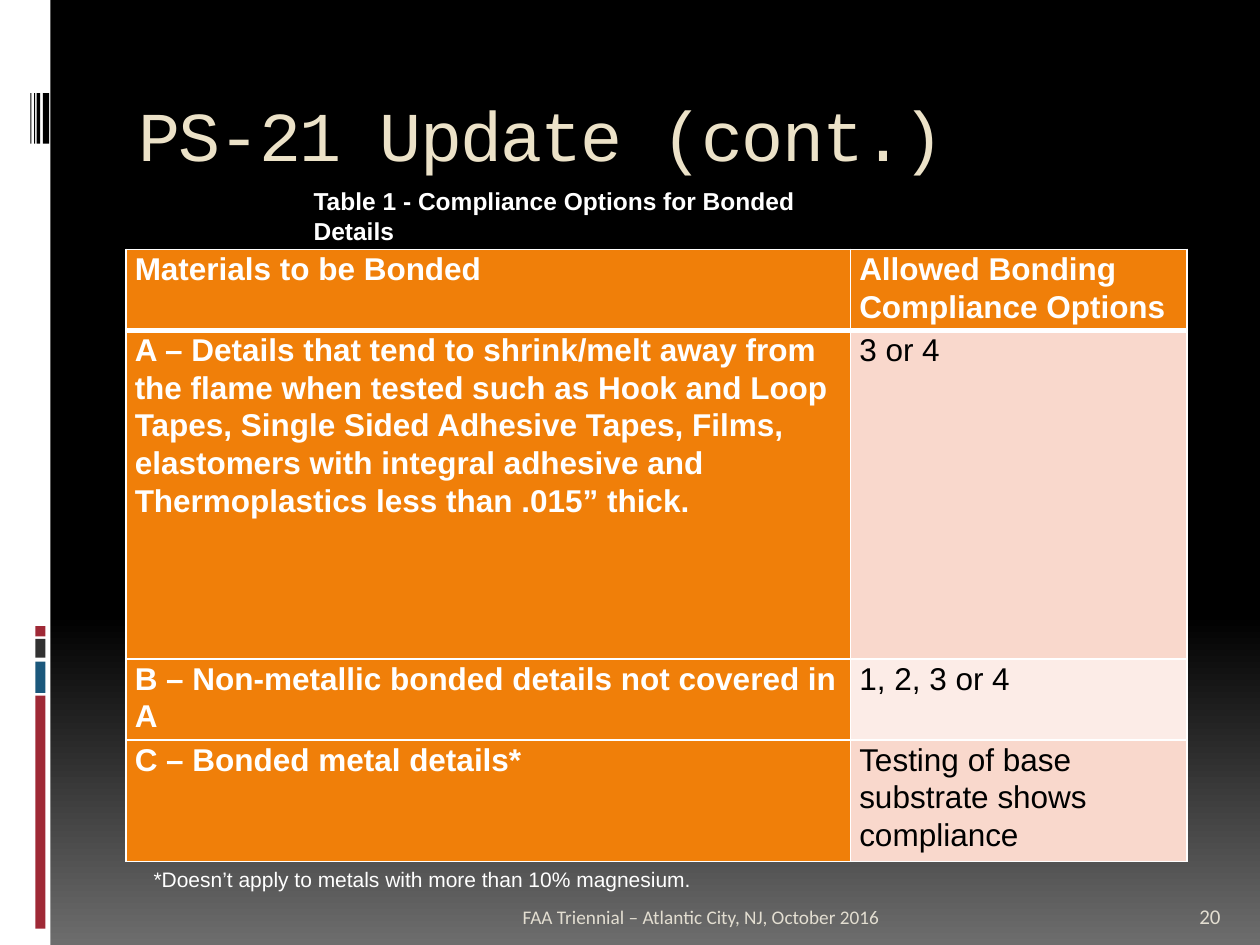
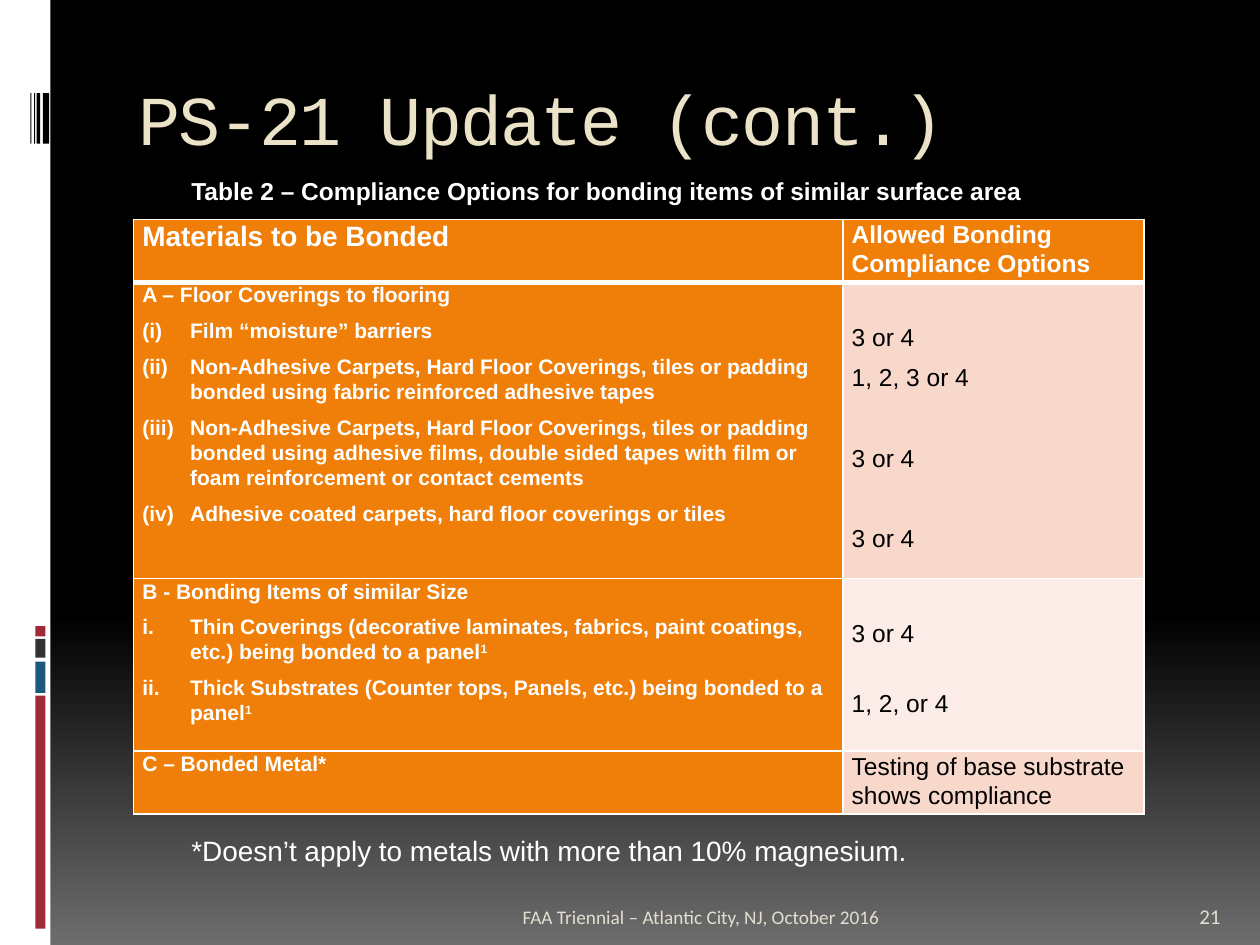
"""Build two slides with tables of bonding compliance options."""
from pptx import Presentation
from pptx.dml.color import RGBColor as RGB
from pptx.enum.shapes import MSO_SHAPE as SHAPE
from pptx.enum.text import MSO_ANCHOR as ANCHOR, PP_ALIGN as ALIGN
from pptx.oxml.ns import qn
from pptx.util import Inches, Pt
from lxml.etree import SubElement

BLACK, WHITE = RGB(0, 0, 0), RGB(255, 255, 255)
GREY, CHARCOAL = RGB(0x6D, 0x6D, 0x6D), RGB(0x32, 0x32, 0x32)
RED, BLUE = RGB(0x9F, 0x29, 0x36), RGB(0x1B, 0x58, 0x7C)
CREAM, SAND = RGB(0xEC, 0xE2, 0xC8), RGB(0xE3, 0xDE, 0xD1)
ORANGE = RGB(0xF0, 0x7F, 0x09)
TINTS = RGB(0xF9, 0xD8, 0xCC), RGB(0xFC, 0xEC, 0xE7)

TITLE_FONT = {"name": "Courier New", "size": Pt(40), "color": CREAM}
FOOTER_FONT = {"name": "Calibri", "size": Pt(11), "color": SAND}
NUMBER_FONT = FOOTER_FONT | {"size": Pt(12)}
NOTE_FONT = {"name": "Arial", "size": Pt(12), "color": WHITE}
CAPTION_FONT = NOTE_FONT | {"size": Pt(14), "bold": True}

BANDS = [
    (0, 0, 0.4, 7.5, WHITE),
    (0.28, 5.52, 0.08, 1.85, RED), (0.28, 5.25, 0.08, 0.25, BLUE),
    (0.28, 5.07, 0.08, 0.15, CHARCOAL), (0.28, 4.97, 0.08, 0.08, RED),
    (0.34, 0.74, 0.05, 0.4, BLACK), (0.29, 0.74, 0.03, 0.4, BLACK),
    (0.27, 0.74, 0.01, 0.4, BLACK), (0.24, 0.74, 0.01, 0.4, BLACK),
]
TITLE = "PS-21 Update (cont.)"
FOOTER = "FAA Triennial – Atlantic City, NJ, October 2016"
NOTE = "*Doesn’t apply to metals with more than 10% magnesium."
HEADS = "Materials to be Bonded", "Allowed Bonding Compliance Options"
METAL_RULE = "Testing of base substrate shows compliance"

LINE, SPACE = 17.2, 3
SKIP = LINE + 2 * SPACE

SLIDES = [
    {
        "number": "20", "title_top": 0.56,
        "caption": ("Table 1 - Compliance Options for Bonded Details", (2.39, 1.43, 4.69, 0.34)),
        "note": ((1.12, 6.83, 6.55, 0.3), 12),
        "at": (1, 1.98), "cols": (5.75, 2.67), "rows": (0.63, 2.61, 0.63, 0.63),
        "head_sizes": (18, 18), "body_sizes": (18, 18),
        "body": [
            {"items": ["A – Details that tend to shrink/melt away from the flame when tested such as "
                       "Hook and Loop Tapes, Single Sided Adhesive Tapes, Films, elastomers with "
                       "integral adhesive and Thermoplastics less than .015” thick."],
             "options": ["3 or 4"]},
            {"items": ["B – Non-metallic bonded details not covered in A"],
             "options": ["1, 2, 3 or 4"]},
            {"items": ["C – Bonded metal details*"], "options": [METAL_RULE]},
        ],
    },
    {
        "number": "21", "title_top": 0.43,
        "caption": ("Table 2 – Compliance Options for bonding items of similar surface area",
                    (1.42, 1.35, 7.67, 0.34)),
        "note": ((1.42, 6.56, 6.5, 0.37), 16),
        "at": (1.06, 1.74), "cols": (5.63, 2.39), "rows": (0.48, 2.35, 1.37, 0.48),
        "head_sizes": (16, 14), "body_sizes": (12, 14),
        "body": [
            {"items": ["A – Floor Coverings to flooring",
                       "Film “moisture” barriers",
                       "Non-Adhesive Carpets, Hard Floor Coverings, tiles or padding bonded using "
                       "fabric reinforced adhesive tapes",
                       "Non-Adhesive Carpets, Hard Floor Coverings, tiles or padding bonded using "
                       "adhesive films, double sided tapes with film or foam reinforcement or "
                       "contact cements",
                       "Adhesive coated carpets, hard floor coverings or tiles"],
             "numbering": "romanLcParenBoth",
             "options": ["3 or 4", "1, 2, 3 or 4", "3 or 4", "3 or 4"],
             "gaps": (0, 0, SKIP, SKIP), "top": 0.32},
            {"items": ["B - Bonding Items of similar Size",
                       "Thin Coverings (decorative laminates, fabrics, paint coatings, etc.) "
                       "being bonded to a panel^1",
                       "Thick Substrates (Counter tops, Panels, etc.) being bonded to a panel^1"],
             "numbering": "romanLcPeriod",
             "options": ["3 or 4", "1, 2, or 4"], "gaps": (0, LINE), "top": 0.32},
            {"items": ["C – Bonded Metal*"], "options": [METAL_RULE]},
        ],
    },
]


def add_run(p, text, fmt):
    r = p.add_run()
    r.text = text
    for key, value in fmt.items():
        if key == "color":
            r.font.color.rgb = value
        else:
            setattr(r.font, key, value)
    return r


def add_text(s, text, box, fmt, anchor=ANCHOR.TOP, align=ALIGN.LEFT):
    tf = s.shapes.add_textbox(*map(Inches, box)).text_frame
    tf.word_wrap, tf.vertical_anchor = True, anchor
    p = tf.paragraphs[0]
    p.alignment = align
    return add_run(p, text, fmt)


def add_bands(s):
    for *box, color in BANDS:
        sp = s.shapes.add_shape(SHAPE.RECTANGLE, *map(Inches, box))
        sp.shadow.inherit = False
        sp.fill.solid()
        sp.fill.fore_color.rgb = color
        sp.line.fill.background()


def set_background(s):
    fill = s.background.fill
    fill.gradient()
    fill.gradient_angle = 270
    for stop, position, color in zip(fill.gradient_stops, (0.65, 1), (BLACK, GREY)):
        stop.position, stop.color.rgb = position, color


def set_borders(cell, row):
    tc_pr = cell._tc.get_or_add_tcPr()
    widths = {"L": 1, "R": 1, "T": 3 if row == 1 else 1, "B": 3 if row == 0 else 1}
    for side, width in widths.items():
        ln = SubElement(tc_pr, qn(f"a:ln{side}"), w=str(Pt(width)))
        SubElement(SubElement(ln, qn("a:solidFill")), qn("a:srgbClr"), val=str(WHITE))


def number_item(p, scheme):
    p_pr = p._p.get_or_add_pPr()
    indent = Inches(0.38)
    p_pr.set("marL", str(indent))
    p_pr.set("indent", str(-indent))
    SubElement(p_pr, qn("a:buFont"), typeface="+mj-lt")
    SubElement(p_pr, qn("a:buAutoNum"), type=scheme)


def fill_cell(cell, row, texts, size, color, fill, bold, numbering=None, gaps=(), top=0):
    set_borders(cell, row)
    cell.fill.solid()
    cell.fill.fore_color.rgb = fill
    cell.margin_left = cell.margin_right = Inches(0.07)
    cell.margin_top, cell.margin_bottom = Inches(top), 0
    fmt = {"name": "Arial", "size": Pt(size), "color": color, "bold": bold}
    tf = cell.text_frame
    for i, text in enumerate(texts):
        p = tf.add_paragraph() if i else tf.paragraphs[0]
        p.line_spacing, p.space_after = 1.07, Pt(SPACE)
        p.space_before = Pt(SPACE + (gaps[i] if gaps else 0))
        if numbering and i:
            number_item(p, numbering)
        main, _, mark = text.partition("^")
        add_run(p, main, fmt)
        if mark:
            add_run(p, mark, fmt)._r.get_or_add_rPr().set("baseline", "30000")


def add_options_table(s, data):
    cols, rows = data["cols"], data["rows"]
    box = (*data["at"], sum(cols), sum(rows))
    table = s.shapes.add_table(len(rows), len(cols), *map(Inches, box)).table
    table.first_col = True
    for col, width in zip(table.columns, cols):
        col.width = Inches(width)
    for row, height in zip(table.rows, rows):
        row.height = Inches(height)
    for c, (head, size) in enumerate(zip(HEADS, data["head_sizes"])):
        fill_cell(table.cell(0, c), 0, [head], size, WHITE, ORANGE, True)
    item_size, option_size = data["body_sizes"]
    for i, row in enumerate(data["body"], 1):
        fill_cell(table.cell(i, 0), i, row["items"], item_size, WHITE, ORANGE, True,
                  numbering=row.get("numbering"))
        fill_cell(table.cell(i, 1), i, row["options"], option_size, BLACK,
                  TINTS[(i - 1) % 2], False, gaps=row.get("gaps", ()), top=row.get("top", 0))


def build_slide(prs, data):
    s = prs.slides.add_slide(prs.slide_layouts[6])
    set_background(s)
    add_bands(s)
    r = add_text(s, TITLE, (1, data["title_top"], 8.5, 1), TITLE_FONT, ANCHOR.MIDDLE)
    r._r.get_or_add_rPr().set("spc", "-100")
    add_options_table(s, data)
    add_text(s, FOOTER, (1, 7.02, 6.08, 0.4), FOOTER_FONT, ANCHOR.BOTTOM, ALIGN.RIGHT)
    add_text(s, data["number"], (9.42, 7.02, 0.5, 0.4), NUMBER_FONT, ANCHOR.BOTTOM)
    add_text(s, *data["caption"], CAPTION_FONT)
    box, size = data["note"]
    add_text(s, NOTE, box, NOTE_FONT | {"size": Pt(size)}, ANCHOR.MIDDLE)


def main():
    prs = Presentation()
    prs.slide_width, prs.slide_height = Inches(10), Inches(7.5)
    for data in SLIDES:
        build_slide(prs, data)
    prs.save("out.pptx")


if __name__ == "__main__":
    main()
